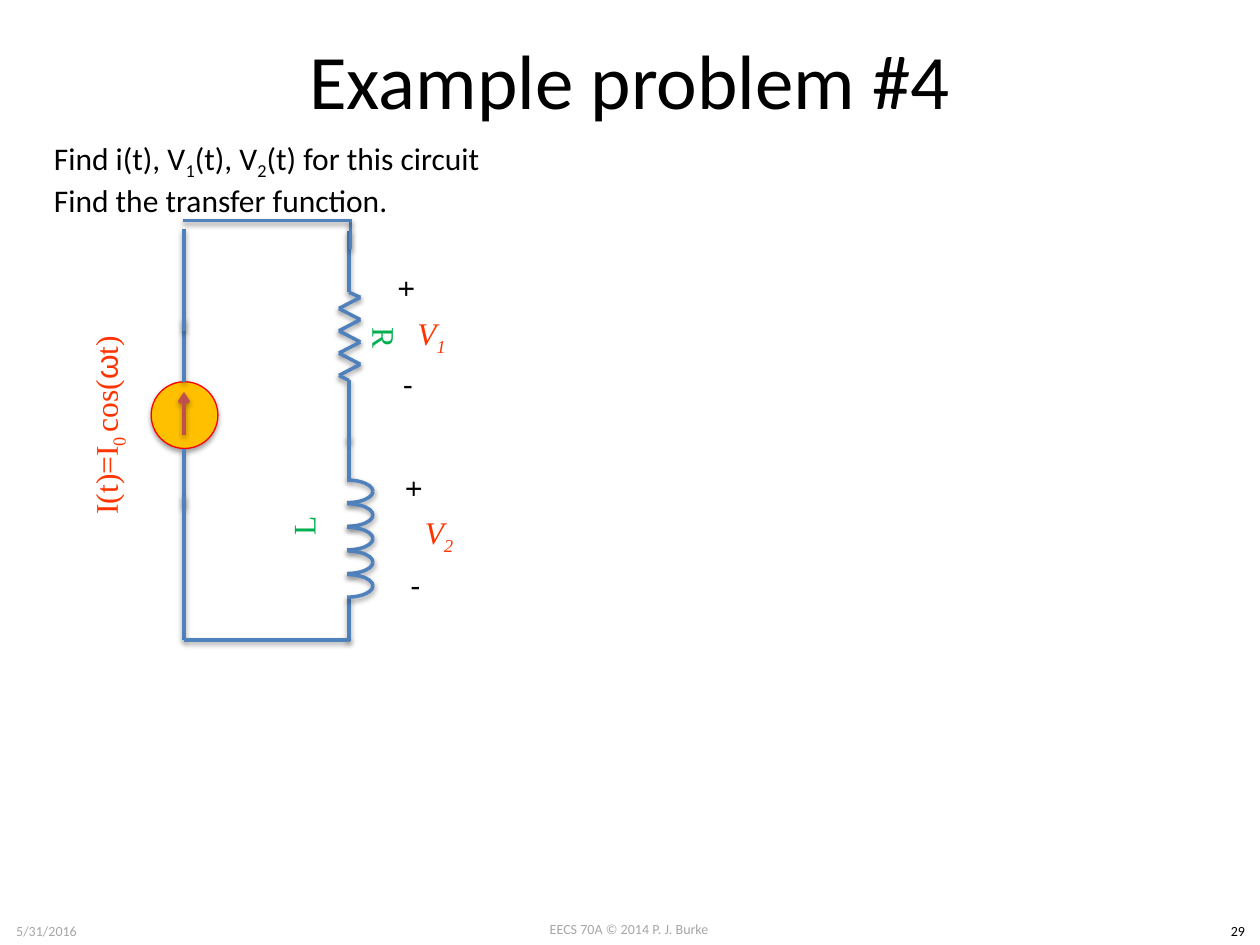
import itertools

import lxml.etree
import pptx
import pptx.dml.color
import pptx.enum.shapes
import pptx.enum.text
import pptx.oxml
import pptx.oxml.ns
import pptx.util

Inches = pptx.util.Inches
RGBColor = pptx.dml.color.RGBColor
ALIGN = pptx.enum.text.PP_ALIGN
ANCHOR = pptx.enum.text.MSO_ANCHOR
PRESET = pptx.enum.shapes.MSO_SHAPE

BLACK = RGBColor(0x00, 0x00, 0x00)
GRAY = RGBColor(0xA6, 0xA6, 0xA6)
BLUE = RGBColor(0x4F, 0x81, 0xBD)
BRICK = RGBColor(0xC0, 0x50, 0x4D)
GREEN = RGBColor(0x00, 0xB0, 0x50)
ORANGE = RGBColor(0xFF, 0x33, 0x00)
AMBER = RGBColor(0xFF, 0xC0, 0x00)
RED = RGBColor(0xFF, 0x00, 0x00)

SERIF = "Times New Roman"
SHADOW = (
    '<a:effectLst %s><a:outerShdw blurRad="39370" dist="20320" dir="5400000" rotWithShape="0">'
    '<a:srgbClr val="000000"><a:alpha val="38000"/></a:srgbClr></a:outerShdw></a:effectLst>'
) % pptx.oxml.ns.nsdecls("a")

deck = pptx.Presentation()
deck.slide_width = Inches(10)
deck.slide_height = Inches(7.5)
slide = deck.slides.add_slide(deck.slide_layouts[6])


def add_text(box, paragraphs, size=18, font="Calibri", color=BLACK, align=ALIGN.LEFT,
             middle=False, wrap=True, italic=False, rotation=0):
    label = slide.shapes.add_textbox(*map(Inches, box))
    label.rotation = rotation
    frame = label.text_frame
    frame.word_wrap = wrap
    frame.vertical_anchor = ANCHOR.MIDDLE if middle else ANCHOR.TOP
    for index, runs in enumerate(paragraphs):
        paragraph = frame.paragraphs[0] if index == 0 else frame.add_paragraph()
        paragraph.alignment = align
        for text, *style in runs:
            run = paragraph.add_run()
            run.text = text
            run.font.size = pptx.util.Pt(size)
            run.font.name = "Arial" if "arial" in style else font
            run.font.color.rgb = color
            run.font.italic = italic
            if "sub" in style:
                run._r.get_or_add_rPr().set("baseline", "-25000")


def draw_stroke(part, color=BLUE, width=2):
    part.line.color.rgb = color
    part.line.width = pptx.util.Pt(width)
    properties = part._element.spPr
    for effects in properties.findall(pptx.oxml.ns.qn("a:effectLst")):
        properties.remove(effects)
    properties.append(pptx.oxml.parse_xml(SHADOW))


for box, text, color in [
    ((3.83, 7.26, 2.33, 0.24), "EECS 70A © 2014 P. J. Burke", GRAY),
    ((0, 7.27, 0.74, 0.24), "5/31/2016", GRAY),
    ((9.65, 7.27, 0.35, 0.24), "29", BLACK),
]:
    add_text(box, [[(text,)]], size=8, color=color, align=ALIGN.CENTER)

add_text((0.5, 0, 9, 1.25), [[("Example problem #4",)]], size=44, align=ALIGN.CENTER, middle=True)
add_text((0.33, 1.05, 6.16, 0.71), [
    [("Find i(t), V",), ("1", "sub"), ("(t), V",), ("2", "sub"), ("(t) for this circuit",)],
    [("Find the transfer function.",)],
])

for box, runs, color, italic, rotation in [
    ((2.46, 2.32, 1.19, 0.73), [("R",)], GREEN, False, 90),
    ((1.81, 3.81, 1.19, 0.73), [("L",)], GREEN, False, 270),
    ((3.04, 2.36, 0.77, 0.61), [("V",), ("1", "sub")], ORANGE, True, 0),
    ((3.1, 3.94, 0.77, 0.61), [("V",), ("2", "sub")], ORANGE, True, 0),
    ((-0.2, 3.07, 2.11, 0.61),
     [("I(t)=I",), ("0 ", "sub"), ("cos(",), ("ω", "arial"), ("t)",)], ORANGE, False, 270),
]:
    add_text(box, [runs], font=SERIF, color=color, align=ALIGN.CENTER, middle=True,
             italic=italic, rotation=rotation)

for left, top in [(3.08, 2.1), (3.14, 3.69)]:
    add_text((left, top, 0.33, 0.4), [[("+",)]], wrap=False, rotation=90)
    add_text((left + 0.02, top + 0.75, 0.28, 0.4), [[("-",)]], wrap=False)

resistor = slide.shapes.add_group_shape()
inductor = slide.shapes.add_group_shape()
current_source = slide.shapes.add_group_shape()

source_body = current_source.shapes.add_shape(
    PRESET.OVAL, Inches(1.2), Inches(3.03), Inches(0.53), Inches(0.53))
source_body.fill.solid()
source_body.fill.fore_color.rgb = AMBER
draw_stroke(source_body, RED, 0.75)

zigzag = [(2.69 if i % 2 else 2.86, 2.36 + 0.62 * i / 7) for i in range(8)]
resistor_path = [(2.77, 1.83), (2.77, 2.32), *zigzag, (2.77, 3.02), (2.77, 3.51)]
wires = [(resistor, start, end) for start, end in itertools.pairwise(resistor_path)]
wires += [
    (slide, (1.46, 3.94), (1.46, 5.08)),
    (slide, (1.46, 5.08), (2.78, 5.08)),
    (slide, (2.78, 1.98), (2.78, 1.75)),
    (slide, (2.79, 1.75), (1.45, 1.75)),
    (slide, (1.46, 2.63), (1.46, 1.82)),
    (inductor, (2.77, 3.81), (2.77, 3.46)),
    (inductor, (2.77, 5.09), (2.77, 4.74)),
    (current_source, (1.46, 3.03), (1.46, 2.53)),
    (current_source, (1.46, 3.56), (1.46, 4.03)),
]
for owner, start, end in wires:
    wire = owner.shapes.add_connector(
        pptx.enum.shapes.MSO_CONNECTOR.STRAIGHT, *map(Inches, start + end))
    draw_stroke(wire)

current_arrow = current_source.shapes.add_connector(
    pptx.enum.shapes.MSO_CONNECTOR.STRAIGHT, *map(Inches, (1.46, 3.45, 1.46, 3.11)))
draw_stroke(current_arrow, BRICK)
lxml.etree.SubElement(current_arrow.line._get_or_add_ln(), pptx.oxml.ns.qn("a:tailEnd"), type="arrow")

for turn, flipped in itertools.product(range(5), (False, True)):
    coil = inductor.shapes.add_shape(
        PRESET.ARC, Inches(2.55), Inches(3.81 + 0.75 * turn / 4), Inches(0.41), Inches(0.18))
    coil.fill.background()
    draw_stroke(coil)
    if flipped:
        coil._element.spPr.xfrm.set("flipV", "1")

deck.save("out.pptx")
